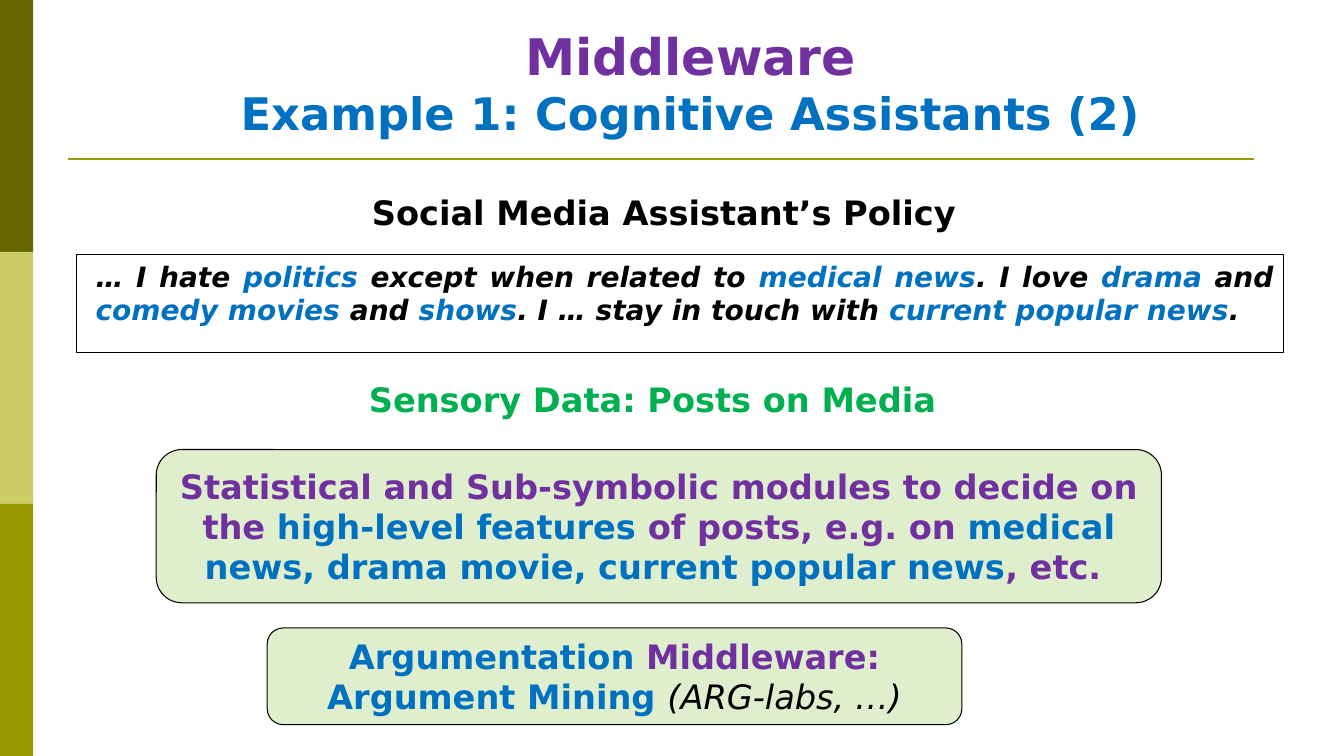
"""Build the slide on middleware for cognitive assistants."""
from lxml import etree
from pptx import Presentation
from pptx.dml.color import RGBColor
from pptx.enum import shapes, text
from pptx.oxml.ns import qn
from pptx.util import Inches, Pt

FONT = "DejaVu Sans"
BLACK = RGBColor(0x00, 0x00, 0x00)
PURPLE = RGBColor(0x70, 0x30, 0xA0)
BLUE = RGBColor(0x00, 0x70, 0xC0)
GREEN = RGBColor(0x00, 0xB0, 0x50)
PALE_GREEN = RGBColor(0xDF, 0xEE, 0xCC)
DARK_OLIVE = RGBColor(0x66, 0x66, 0x00)
LIGHT_OLIVE = RGBColor(0xCC, 0xCC, 0x66)
OLIVE = RGBColor(0x99, 0x99, 0x00)


def write(box, spans, size, align, anchor, italic=None):
    """Fill a box with one bold paragraph of coloured spans."""
    frame = box.text_frame
    frame.word_wrap = True
    frame.vertical_anchor = anchor
    paragraph = frame.paragraphs[0]
    paragraph.alignment = align
    paragraph.font.name = FONT
    paragraph.font.size = Pt(size)
    paragraph.font.bold = True
    paragraph.font.italic = italic
    for words, color in spans:
        span = paragraph.add_run()
        span.text = words
        span.font.color.rgb = color
    return paragraph


def add_panel(kind, left, top, width, height, fill=None, line=None):
    """Add a flat shape with an optional fill and thin outline."""
    panel = page.shapes.add_shape(
        kind, Inches(left), Inches(top), Inches(width), Inches(height))
    panel.shadow.inherit = False
    if fill is None:
        panel.fill.background()
    else:
        panel.fill.solid()
        panel.fill.fore_color.rgb = fill
    if line is None:
        panel.line.fill.background()
    else:
        panel.line.color.rgb = line
        panel.line.width = Pt(0.75)
    return panel


deck = Presentation()
deck.slide_width = Inches(13.33)
deck.slide_height = Inches(7.5)
page = deck.slides.add_slide(deck.slide_layouts[5])
RECTANGLE = shapes.MSO_SHAPE.RECTANGLE
ROUNDED = shapes.MSO_SHAPE.ROUNDED_RECTANGLE
CENTER = text.PP_ALIGN.CENTER
TOP = text.MSO_ANCHOR.TOP
MIDDLE = text.MSO_ANCHOR.MIDDLE

for index, color in enumerate((DARK_OLIVE, LIGHT_OLIVE, OLIVE)):
    add_panel(RECTANGLE, 0, 2.5 * index, 0.33, 2.5, color)

rule = page.shapes.add_connector(
    shapes.MSO_CONNECTOR.STRAIGHT,
    Inches(0.67), Inches(1.58), Inches(12.44), Inches(1.58))
rule.line.color.rgb = OLIVE
rule.line.width = Pt(1.5)
etree.SubElement(rule.element.spPr, qn("a:effectLst"))

title = page.shapes.title
title.left, title.top = Inches(0.37), Inches(0.18)
title.width, title.height = Inches(12.96), Inches(1.25)
title.text_frame.auto_size = text.MSO_AUTO_SIZE.NONE
heading = write(title, [("Middleware", PURPLE)], 36, CENTER, text.MSO_ANCHOR.BOTTOM)
heading.add_line_break()
subtitle = heading.add_run()
subtitle.text = "Example 1: Cognitive Assistants (2)"
subtitle.font.size = Pt(32)
subtitle.font.color.rgb = BLUE

policy_spans = [
    ("… I hate ", BLACK), ("politics", BLUE),
    (" except when related to ", BLACK), ("medical news", BLUE),
    (". I love ", BLACK), ("drama", BLUE),
    (" and ", BLACK), ("comedy movies ", BLUE),
    ("and ", BLACK), ("shows", BLUE),
    (". I … stay in touch with ", BLACK), ("current popular news", BLUE),
    (".", BLACK),
]
policy_box = add_panel(RECTANGLE, 0.76, 2.52, 11.97, 0.98, line=BLACK)
policy = write(policy_box, policy_spans, 20, text.PP_ALIGN.JUSTIFY, TOP, italic=True)
policy_properties = policy._p.get_or_add_pPr()
policy_properties.set("marL", str(Inches(0.09)))
policy_properties.set("indent", "0")

captions = [
    (3.59, 1.85, "Social Media Assistant’s Policy", BLACK),
    (3.56, 3.71, "Sensory Data: Posts on Media", GREEN),
]
for left, top, words, color in captions:
    caption = page.shapes.add_textbox(
        Inches(left), Inches(top), Inches(6.15), Inches(0.5))
    write(caption, [(words, color)], 24, text.PP_ALIGN.LEFT, TOP)

modules_box = add_panel(ROUNDED, 1.55, 4.46, 9.97, 1.52, PALE_GREEN, BLACK)
write(modules_box, [
    ("Statistical and Sub-symbolic modules to decide on the ", PURPLE),
    ("high-level features ", BLUE),
    ("of posts, e.g. on ", PURPLE),
    ("medical news, drama movie, current popular news", BLUE),
    (", etc. ", PURPLE),
], 24, CENTER, MIDDLE)

middleware_box = add_panel(ROUNDED, 2.65, 6.23, 6.89, 0.96, PALE_GREEN, BLACK)
middleware = write(middleware_box, [
    ("Argumentation", BLUE),
    (" Middleware: ", PURPLE),
    ("Argument Mining ", BLUE),
    ("(ARG-labs, …)", BLACK),
], 24, CENTER, MIDDLE)
example = middleware.runs[-1]
example.font.bold = False
example.font.italic = True

deck.save("out.pptx")
